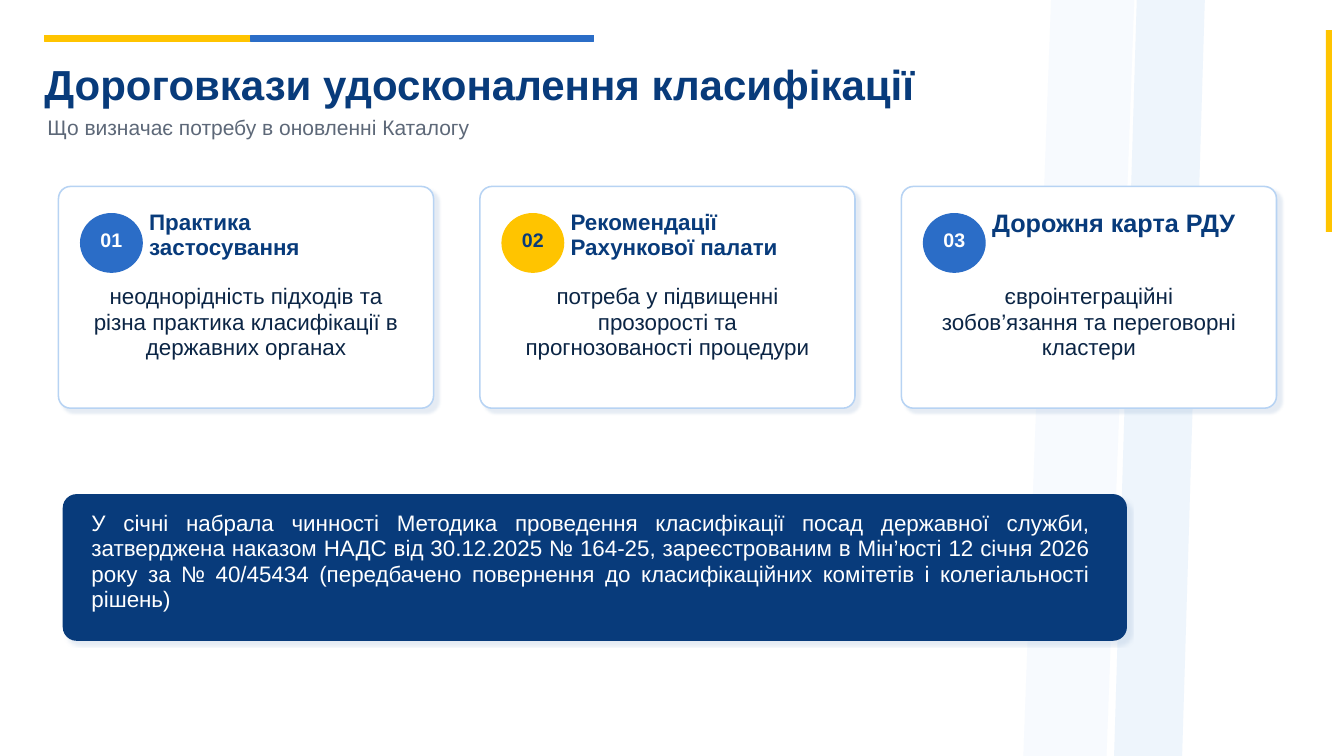
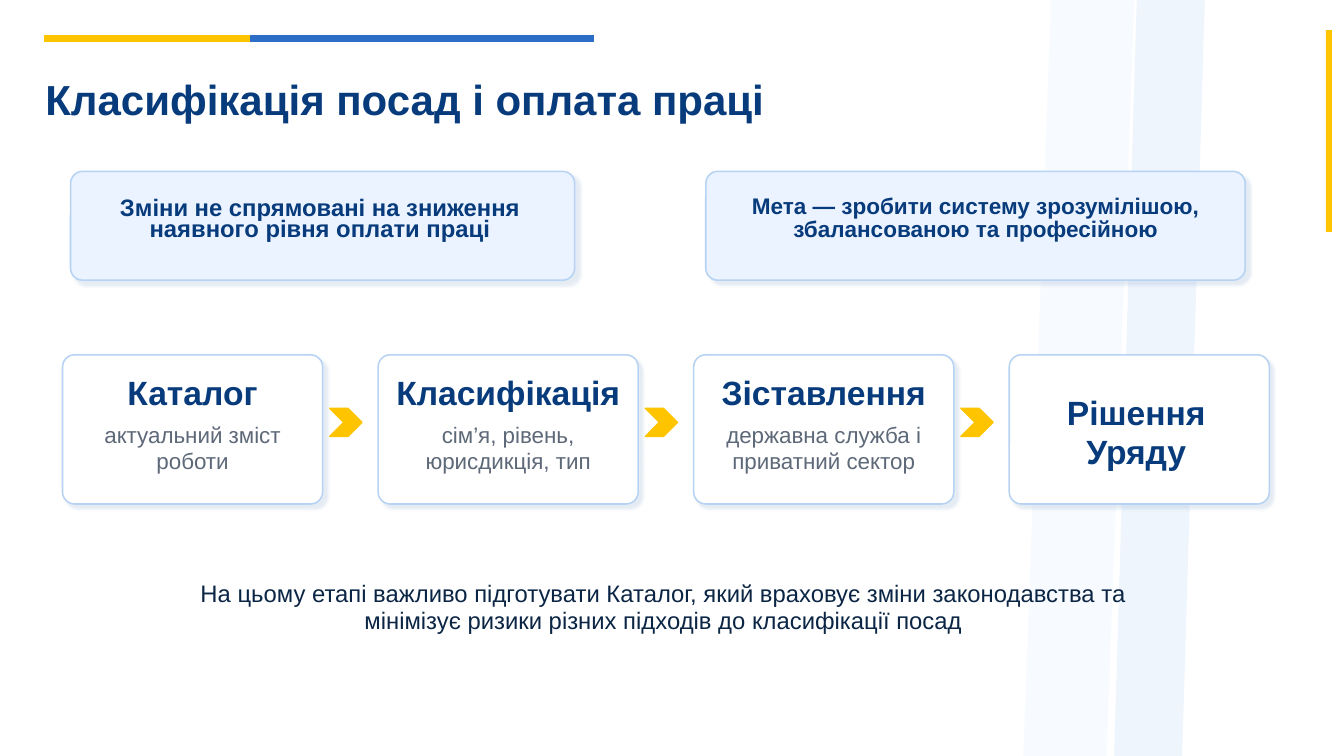
from lxml.etree import SubElement
from pptx import Presentation
from pptx.dml.color import RGBColor
from pptx.enum.shapes import MSO_SHAPE as SHAPE
from pptx.enum.text import MSO_ANCHOR as ANCHOR, MSO_AUTO_SIZE as AUTO_SIZE, PP_ALIGN as ALIGN
from pptx.oxml.ns import qn
from pptx.util import Emu, Pt

PX = 9144
COLOURS = {
    "navy": "083B7B", "blue": "2B6DC7", "yellow": "FFC400", "white": "FFFFFF",
    "ink": "0B2545", "grey": "5D6878", "edge": "B7D3F3", "mist": "EAF3FF",
    "shadow": "8AA8CC", "pale stripe": "F7FAFE", "stripe": "EEF5FC",
}
RGB = {name: RGBColor.from_string(value) for name, value in COLOURS.items()}

TITLE = {"size": 30, "bold": True, "colour": "navy"}
SUBTITLE = {"size": 15, "colour": "grey"}
BADGE = {"size": 14, "bold": True, "align": ALIGN.CENTER, "anchor": ANCHOR.MIDDLE, "margins": (0, 0, 0, 4)}
HEADING = {"size": 16, "bold": True, "colour": "navy"}
BODY = {"size": 16, "colour": "ink", "align": ALIGN.CENTER}
BANNER = {"size": 16, "colour": "white", "align": ALIGN.JUSTIFY, "margins": (24, 12, 32, 0)}
GOAL = {"bold": True, "colour": "navy", "align": ALIGN.CENTER}
STEP = {"size": 24, "bold": True, "colour": "navy", "align": ALIGN.CENTER}
DETAIL = {"size": 16, "colour": "grey", "align": ALIGN.CENTER}
CONCLUSION = {"size": 17, "colour": "ink", "align": ALIGN.CENTER}


def draw(slide, kind, rect, fill, edge=None, weight=1, radius=None):
    figure = slide.shapes.add_shape(kind, *[Emu(value * PX) for value in rect])
    figure.shadow.inherit = False
    figure.fill.solid()
    figure.fill.fore_color.rgb = RGB[fill]
    if edge:
        figure.line.color.rgb = RGB[edge]
        figure.line.width = Pt(weight)
    else:
        figure.line.fill.background()
    if radius:
        figure.adjustments[0] = radius / min(rect[2:])
        effects = figure._element.spPr.find(qn("a:effectLst"))
        cast = SubElement(effects, qn("a:outerShdw"), blurRad=str(Pt(2)), dist=str(Pt(4)),
                          dir="2700000", algn="bl", rotWithShape="0")
        tint = SubElement(cast, qn("a:srgbClr"), val=COLOURS["shadow"])
        SubElement(tint, qn("a:alpha"), val="22000")
    return figure


def write(slide, text, style, rect=None, holder=None):
    holder = holder or slide.shapes.add_textbox(0, 0, 0, 0)
    if rect:
        for side, value in zip(("left", "top", "width", "height"), rect):
            setattr(holder, side, Emu(value * PX))
    frame = holder.text_frame
    frame.text = text
    frame.word_wrap = True
    frame.auto_size = AUTO_SIZE.NONE
    frame.vertical_anchor = style.get("anchor", ANCHOR.TOP)
    for side, value in zip(("left", "top", "right", "bottom"), style.get("margins", (0, 0, 0, 0))):
        setattr(frame, f"margin_{side}", Emu(value * PX))
    paragraph_format = {
        "alignment": style.get("align", ALIGN.LEFT),
        "line_spacing": style.get("spacing", 0.95),
        "space_before": Pt(0),
    }
    font_format = {"name": "Arial", "size": Pt(style["size"]), "bold": style.get("bold", False)}
    for paragraph in frame.paragraphs:
        for name, value in paragraph_format.items():
            setattr(paragraph, name, value)
        for run in paragraph.runs:
            for name, value in font_format.items():
                setattr(run.font, name, value)
            run.font.color.rgb = RGB[style["colour"]]


deck = Presentation()
deck.slide_width, deck.slide_height = Emu(1333 * PX), Emu(750 * PX)

decor = [
    (SHAPE.PARALLELOGRAM, (1015, 0, 110, 750), "pale stripe", None),
    (SHAPE.PARALLELOGRAM, (1105, 0, 90, 750), "stripe", None),
    (SHAPE.RECTANGLE, (1315, 30, 6, 200), "yellow", None),
    (SHAPE.RECTANGLE, (44, 35, 205, 6), "yellow", "yellow"),
    (SHAPE.RECTANGLE, (249, 35, 340, 6), "blue", "blue"),
]
titles = [
    ("Дороговкази удосконалення класифікації", (44, 62, 1150, 48)),
    ("Класифікація посад і оплата праці", (45, 77, 1150, 48)),
]
slides = []
for title, rect in titles:
    slide = deck.slides.add_slide(deck.slide_layouts[5])
    for kind, place, fill, edge in decor:
        draw(slide, kind, place, fill, edge)
    write(slide, title, TITLE, rect, slide.shapes.title)
    slides.append(slide)
drivers_slide, pay_slide = slides

write(drivers_slide, "Що визначає потребу в оновленні Каталогу", SUBTITLE, (47, 115, 1140, 32))

drivers = [
    ("Практика застосування", 16, "blue", "white",
     "неоднорідність підходів та різна практика класифікації в державних органах"),
    ("Рекомендації Рахункової палати", 16, "yellow", "navy",
     "потреба у підвищенні прозорості та прогнозованості процедури"),
    ("Дорожня карта РДУ", 18, "blue", "white",
     "євроінтеграційні зобов’язання та переговорні кластери"),
]
for index, (heading, size, fill, ink, reason) in enumerate(drivers):
    left = 58 + index * 418
    draw(drivers_slide, SHAPE.ROUNDED_RECTANGLE, (left, 185, 372, 220), "white", "edge", 1.1, 12)
    badge = draw(drivers_slide, SHAPE.OVAL, (left + 22, 212, 61, 58), fill, fill)
    write(drivers_slide, f"{index + 1:02}", {**BADGE, "colour": ink}, holder=badge)
    write(drivers_slide, heading, {**HEADING, "size": size}, (left + 90, 208, 246, 42))
    write(drivers_slide, reason, BODY, (left + 34, 282, 304, 92))

banner = draw(drivers_slide, SHAPE.ROUNDED_RECTANGLE, (63, 491, 1054, 144), "navy", "navy", 1.1, 13)
write(drivers_slide,
      "У січні набрала чинності Методика проведення класифікації посад державної служби, "
      "затверджена наказом НАДС від 30.12.2025 № 164-25, зареєстрованим в Мін’юсті "
      "12 січня 2026 року за № 40/45434 (передбачено повернення до класифікаційних "
      "комітетів і колегіальності рішень)",
      BANNER, holder=banner)

goals = [
    ("Зміни не спрямовані на зниження наявного рівня оплати праці",
     (70, 170, 500, 108), {"size": 17, "spacing": 0.75, "margins": (26, 24, 31, 0)}),
    ("Мета — зробити систему зрозумілішою, збалансованою та професійною",
     (700, 170, 535, 108), {"size": 16.1, "spacing": 0.85, "margins": (26, 21, 26, 0)}),
]
for goal, rect, style in goals:
    panel = draw(pay_slide, SHAPE.ROUNDED_RECTANGLE, rect, "mist", "edge", 1.1, 12)
    write(pay_slide, goal, {**GOAL, **style}, holder=panel)

steps = [
    ("Каталог", "актуальний зміст роботи"),
    ("Класифікація", "сім’я, рівень, юрисдикція, тип"),
    ("Зіставлення", "державна служба і приватний сектор"),
    ("Рішення Уряду", None),
]
for index, (step, detail) in enumerate(steps):
    left = 62 + index * 313
    draw(pay_slide, SHAPE.ROUNDED_RECTANGLE, (left, 352, 258, 148), "white", "edge", 1.1, 12)
    if detail:
        write(pay_slide, step, STEP, (left + 14, 372, 230, 34))
        write(pay_slide, detail, DETAIL, (left + 18, 420, 222, 45))
        draw(pay_slide, SHAPE.CHEVRON, (left + 265, 405, 32, 28), "yellow", "yellow")
    else:
        write(pay_slide, step, STEP, (left + 5, 392, 242, 34))

write(pay_slide,
      "На цьому етапі важливо підготувати Каталог, який враховує зміни законодавства та\n"
      "мінімізує ризики різних підходів до класифікації посад",
      CONCLUSION, (88, 576, 1140, 54))

deck.save("out.pptx")
